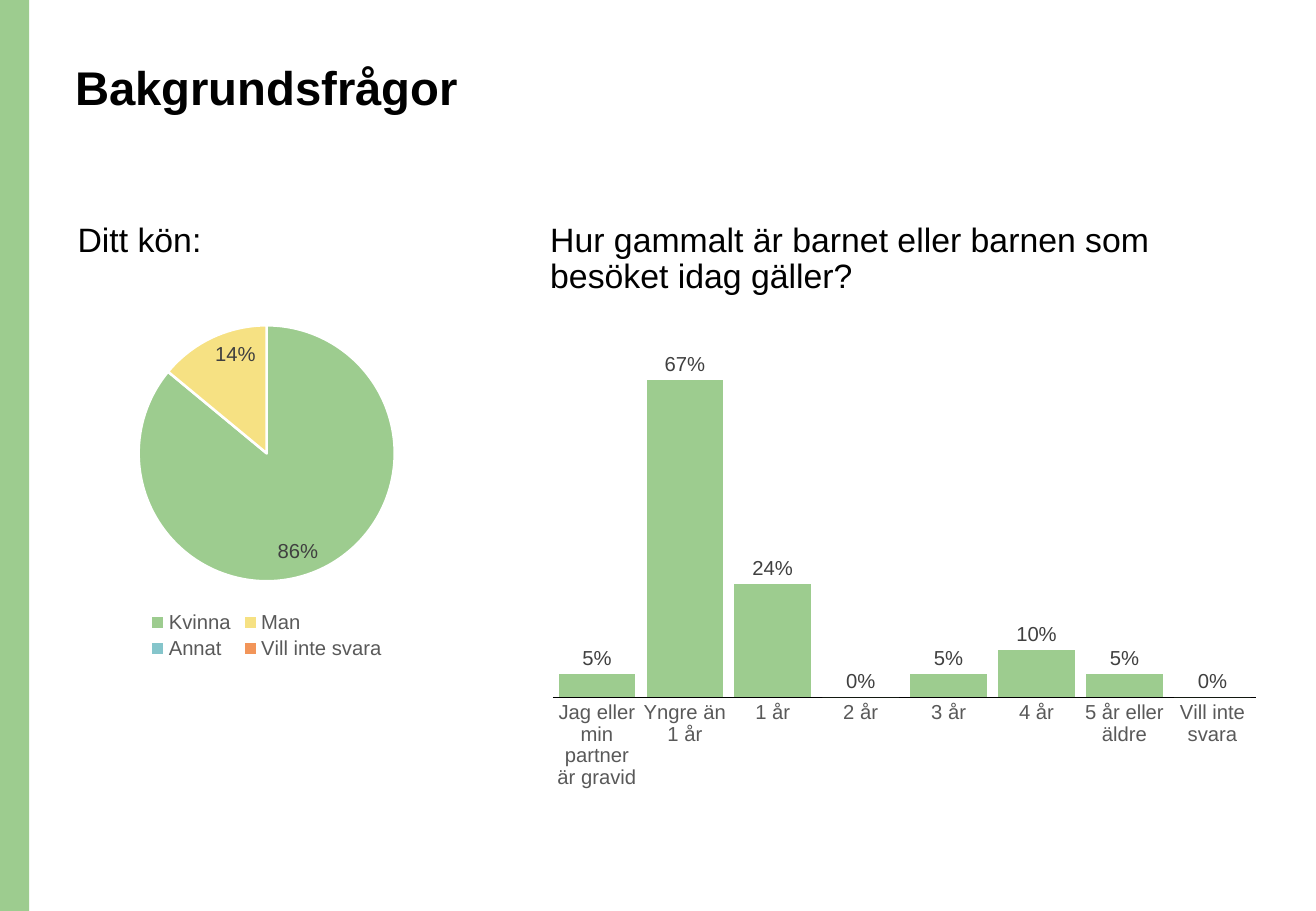
from pptx import Presentation
from pptx.chart.data import CategoryChartData
from pptx.dml.color import RGBColor
from pptx.enum.chart import XL_CHART_TYPE as ChartType
from pptx.enum.chart import XL_LABEL_POSITION as LabelPosition
from pptx.enum.chart import XL_LEGEND_POSITION as LegendPosition
from pptx.enum.chart import XL_TICK_MARK as TickMark
from pptx.enum.shapes import MSO_SHAPE
from pptx.util import Inches, Pt

FONT = "Arial"
BLACK = RGBColor(0x00, 0x00, 0x00)
WHITE = RGBColor(0xFF, 0xFF, 0xFF)
LABEL_GREY = RGBColor(0x40, 0x40, 0x40)
AXIS_GREY = RGBColor(0x59, 0x59, 0x59)
GREEN = RGBColor(0x9D, 0xCC, 0x8F)
YELLOW = RGBColor(0xF6, 0xE1, 0x83)
TEAL = RGBColor(0x85, 0xC5, 0xCB)
ORANGE = RGBColor(0xF2, 0x95, 0x59)

GENDER = {"Kvinna": 0.86, "Man": 0.14, "Annat": 0, "Vill inte svara": 0}
CHILD_AGE = {
    "Jag eller min partner är gravid": 0.05,
    "Yngre än 1 år": 0.67,
    "1 år": 0.24,
    "2 år": 0,
    "3 år": 0.05,
    "4 år": 0.10,
    "5 år eller äldre": 0.05,
    "Vill inte svara": 0,
}


def style_font(font, size, color, bold=False):
    font.name = FONT
    font.size = Pt(size)
    font.bold = bold
    font.color.rgb = color


def paint(fill, color):
    fill.solid()
    fill.fore_color.rgb = color


def add_side_band(slide, height):
    band = slide.shapes.add_shape(MSO_SHAPE.RECTANGLE, 0, 0, Inches(0.24), height)
    band.shadow.inherit = False
    paint(band.fill, GREEN)
    band.line.fill.background()


def add_text(slide, text, left, top, width, height, size, bold=False):
    box = slide.shapes.add_textbox(
        Inches(left), Inches(top), Inches(width), Inches(height))
    frame = box.text_frame
    frame.word_wrap = True
    frame.text = text
    paragraph = frame.paragraphs[0]
    paragraph.line_spacing = 0.9
    style_font(paragraph.runs[0].font, size, BLACK, bold)


def add_share_chart(slide, kind, shares, left, top, width, height,
                    label_format, label_position):
    data = CategoryChartData(number_format="0%")
    data.categories = list(shares)
    data.add_series("Series 1", list(shares.values()))
    chart = slide.shapes.add_chart(
        kind, Inches(left), Inches(top), Inches(width), Inches(height), data).chart
    chart.has_title = False
    chart.has_legend = False
    style_font(chart.font, 10, BLACK)
    plot = chart.plots[0]
    plot.has_data_labels = True
    labels = plot.data_labels
    labels.show_value = True
    labels.show_percentage = False
    labels.number_format = label_format
    labels.number_format_is_linked = False
    labels.position = label_position
    style_font(labels.font, 12, LABEL_GREY)
    return chart


def add_gender_pie(slide):
    chart = add_share_chart(
        slide, ChartType.PIE, GENDER, 0.53, 2.54, 3.33, 2.93,
        '[<0.01]"";[>0.01]0%', LabelPosition.INSIDE_END)
    chart.plots[0].vary_by_categories = True
    for index, color in enumerate((GREEN, YELLOW, TEAL, ORANGE)):
        slice_format = chart.series[0].points[index].format
        paint(slice_format.fill, color)
        slice_format.line.color.rgb = WHITE
        slice_format.line.width = Pt(1.5)
    chart.has_legend = True
    chart.legend.position = LegendPosition.BOTTOM
    chart.legend.include_in_layout = False
    style_font(chart.legend.font, 12, AXIS_GREY)


def add_age_columns(slide):
    chart = add_share_chart(
        slide, ChartType.COLUMN_CLUSTERED, CHILD_AGE, 4.43, 2.54, 6.03, 4.03,
        "0%", LabelPosition.OUTSIDE_END)
    plot = chart.plots[0]
    plot.vary_by_categories = False
    plot.gap_width = 15
    plot.overlap = -27
    paint(chart.series[0].format.fill, GREEN)
    ages = chart.category_axis
    ages.major_tick_mark = TickMark.NONE
    ages.minor_tick_mark = TickMark.NONE
    ages.format.line.color.rgb = BLACK
    ages.format.line.width = Pt(0.75)
    style_font(ages.tick_labels.font, 12, AXIS_GREY)
    shares = chart.value_axis
    shares.minimum_scale = 0
    shares.maximum_scale = 0.8
    shares.has_major_gridlines = False
    shares.visible = False


def main():
    deck = Presentation()
    deck.slide_width = Inches(10.83)
    deck.slide_height = Inches(7.5)
    slide = deck.slides.add_slide(deck.slide_layouts[6])
    add_side_band(slide, deck.slide_height)
    add_text(slide, "Bakgrundsfrågor", 0.52, 0.48, 9.34, 1.02, 28, bold=True)
    add_text(slide, "Ditt kön:", 0.54, 1.79, 3.6, 0.46, 20)
    add_text(slide, "Hur gammalt är barnet eller barnen som besöket idag gäller?",
             4.43, 1.79, 6.03, 0.74, 20)
    add_gender_pie(slide)
    add_age_columns(slide)
    deck.save("out.pptx")


if __name__ == "__main__":
    main()
